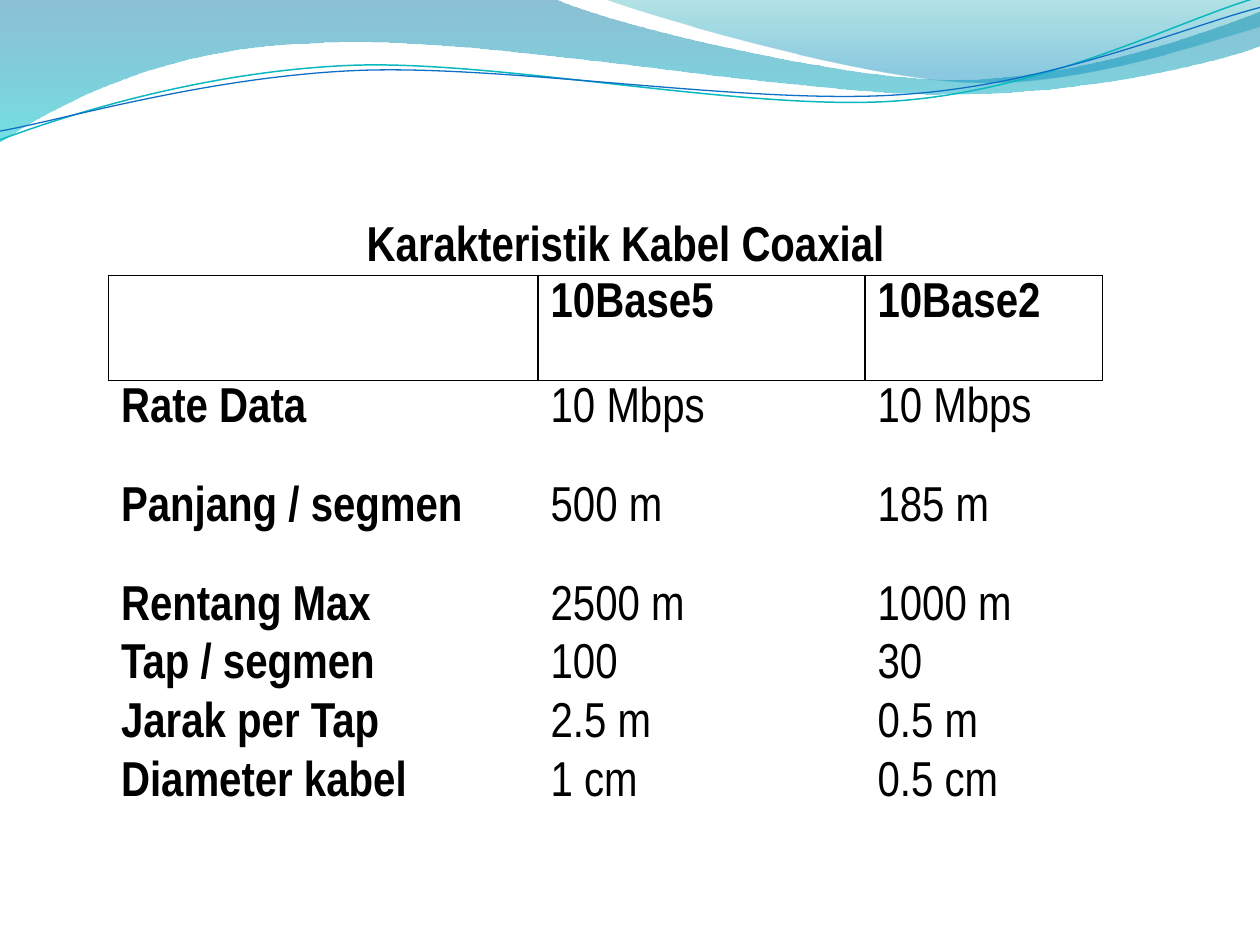
from dataclasses import dataclass
from typing import Optional
import math

import lxml.etree
import pptx
import pptx.dml.color
import pptx.enum.text
import pptx.oxml.ns
import pptx.util

Point = tuple[float, float]

COLORS = {
    "black": "000000",
    "deep_blue": "0074A1",
    "turquoise": "00C6CF",
    "teal": "00A1A9",
    "sky": "008BBF",
    "teal_line": "0AB8BF",
    "blue_line": "0F6FC6",
}
FONT = "Arial Narrow"
TEXT_SIZE = 28
LINE_ROTATION = -2.7
NO_STYLE_NO_GRID = "{2D5ABB26-0587-4C30-8999-92F81FD0307C}"


@dataclass
class GradientStop:
    position: float
    color: str
    opacity: int


@dataclass
class Wave:
    start: Point
    segments: list[tuple[Point, ...]]
    gradient: Optional[tuple[GradientStop, GradientStop]] = None
    line_color: str = ""
    line_width: float = 0
    pivot: Point = (0, 0)
    rotation: float = 0


@dataclass
class CableRow:
    label: str
    thick: str
    thin: str
    height: float


WAVES = [
    Wave(
        (0, 0),
        [
            ((316.8, -0.7),),
            ((342.7, 12.2), (478.1, 45.4), (545.8, 45.4)),
            ((614.2, 45.4), (689.8, 18.7), (720, 6.5)),
            ((720.7, 25.9),),
            ((707.8, 31.7), (626.4, 54.7), (537.1, 54)),
            ((447.8, 54), (275, 20.2), (185, 24.5)),
            ((92.9, 25.9), (33.1, 59.8), (-0.7, 81.4)),
        ],
        gradient=(GradientStop(0, "deep_blue", 45), GradientStop(1, "turquoise", 55)),
    ),
    Wave(
        (344.9, -0.7),
        [
            ((366.5, 7.9), (491, 44.6), (553.7, 46.8)),
            ((616.3, 49.7), (691.9, 23), (720, 15.1)),
            ((720, 0),),
        ],
        gradient=(GradientStop(0, "teal", 30), GradientStop(0.8, "sky", 45)),
    ),
    Wave(
        (0, 79.9),
        [
            ((34.6, 67), (113.8, 41), (199.4, 37.4)),
            ((284.4, 33.8), (427, 64.1), (513.4, 57.6)),
            ((599.8, 51.1), (675.4, 10.8), (718.6, -1.4)),
        ],
        line_color="teal_line",
        line_width=0.85,
        pivot=(359.3, 41.4),
        rotation=LINE_ROTATION,
    ),
    Wave(
        (0, 74.9),
        [
            ((33.8, 69.1), (118.1, 43.9), (203.8, 40.3)),
            ((290.2, 36.7), (429.8, 60.5), (516.2, 54)),
            ((601.9, 48.2), (677.5, 15.1), (720, 4.3)),
        ],
        line_color="blue_line",
        line_width=0.75,
        pivot=(359.6, 42.5),
        rotation=LINE_ROTATION,
    ),
]

COLUMN_WIDTHS = [245.5, 186.8, 135.7]
CABLE_ROWS = [
    CableRow("", "10Base5", "10Base2", 60),
    CableRow("Rate Data", "10 Mbps", "10 Mbps", 56.6),
    CableRow("Panjang / segmen", "500 m", "185 m", 56.6),
    CableRow("Rentang Max", "2500 m", "1000 m", 33.6),
    CableRow("Tap / segmen", "100", "30", 33.6),
    CableRow("Jarak per Tap", "2.5 m", "0.5 m", 33.6),
    CableRow("Diameter kabel", "1 cm", "0.5 cm", 33.6),
]


def rgb(name: str) -> pptx.dml.color.RGBColor:
    return pptx.dml.color.RGBColor.from_string(COLORS[name])


def add_child(parent, tag: str, **attributes: str):
    child = lxml.etree.SubElement(parent, pptx.oxml.ns.qn(tag))
    for key, value in attributes.items():
        child.set(key, value)
    return child


def level(point: Point, wave: Wave) -> Point:
    angle = math.radians(-wave.rotation)
    dx, dy = point[0] - wave.pivot[0], point[1] - wave.pivot[1]
    x = wave.pivot[0] + dx * math.cos(angle) - dy * math.sin(angle)
    y = wave.pivot[1] + dx * math.sin(angle) + dy * math.cos(angle)
    return pptx.util.Pt(x), pptx.util.Pt(y)


def bend(ribbon, segments: list[tuple[Point, ...]]) -> None:
    strokes = iter(list(ribbon._element.iter(pptx.oxml.ns.qn("a:lnTo"))))
    for segment in segments:
        stroke = next(strokes)
        if len(segment) == 3:
            stroke.tag = pptx.oxml.ns.qn("a:cubicBezTo")
            for _ in range(2):
                absorbed = next(strokes)
                stroke.append(absorbed[0])
                absorbed.getparent().remove(absorbed)


def draw_wave(slide, wave: Wave) -> None:
    controls = [level(point, wave) for segment in wave.segments for point in segment]
    builder = slide.shapes.build_freeform(*level(wave.start, wave))
    builder.add_line_segments(controls, close=wave.gradient is not None)
    ribbon = builder.convert_to_shape()
    bend(ribbon, wave.segments)
    ribbon.rotation = wave.rotation
    ribbon.shadow.inherit = False
    if wave.gradient is None:
        ribbon.fill.background()
        ribbon.line.color.rgb = rgb(wave.line_color)
        ribbon.line.width = pptx.util.Pt(wave.line_width)
        return
    ribbon.line.fill.background()
    ribbon.fill.gradient()
    ribbon.fill.gradient_angle = 270
    for stop, wanted in zip(ribbon.fill.gradient_stops, wave.gradient):
        stop.position = wanted.position
        stop.color.rgb = rgb(wanted.color)
    tints = ribbon._element.spPr.iter(pptx.oxml.ns.qn("a:srgbClr"))
    for tint, wanted in zip(list(tints), wave.gradient):
        add_child(tint, "a:alpha", val=str(wanted.opacity * 1000))


def write(text_frame, text: str, bold: bool) -> None:
    run = text_frame.paragraphs[0].add_run()
    run.text = text
    run.font.name = FONT
    run.font.size = pptx.util.Pt(TEXT_SIZE)
    run.font.bold = bold
    run.font.color.rgb = rgb("black")


def draw_borders(cell) -> None:
    for side in ("a:lnL", "a:lnR", "a:lnT", "a:lnB"):
        border = add_child(cell._tc.get_or_add_tcPr(), side, w=str(pptx.util.Pt(1)))
        add_child(add_child(border, "a:solidFill"), "a:srgbClr", val=COLORS["black"])


def draw_cable_table(slide, left: float, top: float) -> None:
    frame = slide.shapes.add_table(
        len(CABLE_ROWS), len(COLUMN_WIDTHS), pptx.util.Pt(left), pptx.util.Pt(top),
        pptx.util.Pt(sum(COLUMN_WIDTHS)), pptx.util.Pt(sum(r.height for r in CABLE_ROWS)),
    )
    table = frame.table
    table.first_row = table.horz_banding = False
    table._tbl.tblPr.find(pptx.oxml.ns.qn("a:tableStyleId")).text = NO_STYLE_NO_GRID
    for column, width in zip(table.columns, COLUMN_WIDTHS):
        column.width = pptx.util.Pt(width)
    for row_index, cable_row in enumerate(CABLE_ROWS):
        table.rows[row_index].height = pptx.util.Pt(cable_row.height)
        for column_index, text in enumerate((cable_row.label, cable_row.thick, cable_row.thin)):
            cell = table.cell(row_index, column_index)
            cell.margin_top, cell.margin_bottom = pptx.util.Pt(3.4), pptx.util.Pt(0)
            if row_index == 0:
                draw_borders(cell)
            cell.fill.background()
            if text:
                write(cell.text_frame, text, bold=row_index == 0 or column_index == 0)


def draw_title(slide, text: str) -> None:
    title = slide.shapes.add_textbox(
        pptx.util.Pt(202.5), pptx.util.Pt(118), pptx.util.Pt(343.4), pptx.util.Pt(41)
    )
    title.text_frame.word_wrap = False
    title.text_frame.auto_size = pptx.enum.text.MSO_AUTO_SIZE.SHAPE_TO_FIT_TEXT
    write(title.text_frame, text, bold=True)


def main() -> None:
    deck = pptx.Presentation()
    deck.slide_width, deck.slide_height = pptx.util.Pt(720), pptx.util.Pt(540)
    slide = deck.slides.add_slide(deck.slide_layouts[6])
    for wave in WAVES:
        draw_wave(slide, wave)
    draw_cable_table(slide, 62, 157.4)
    draw_title(slide, "Karakteristik Kabel Coaxial")
    deck.save("out.pptx")


if __name__ == "__main__":
    main()
